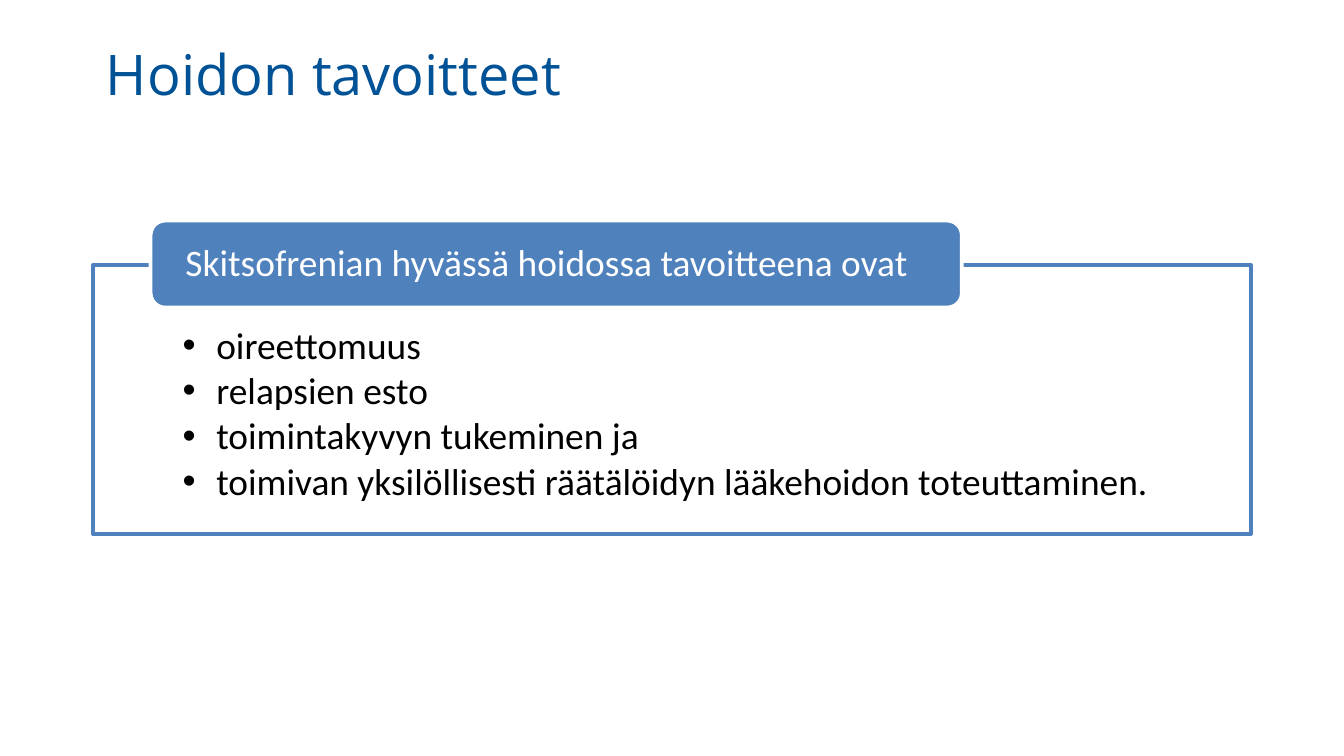
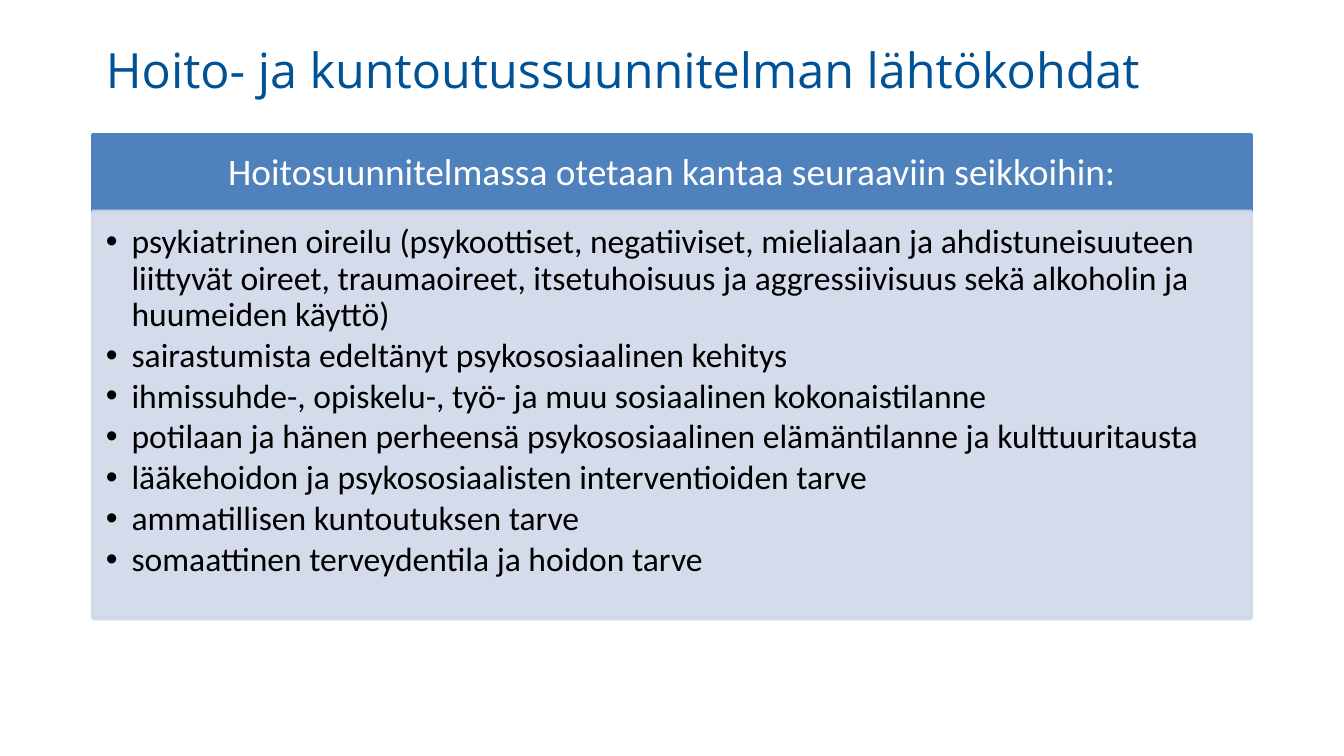
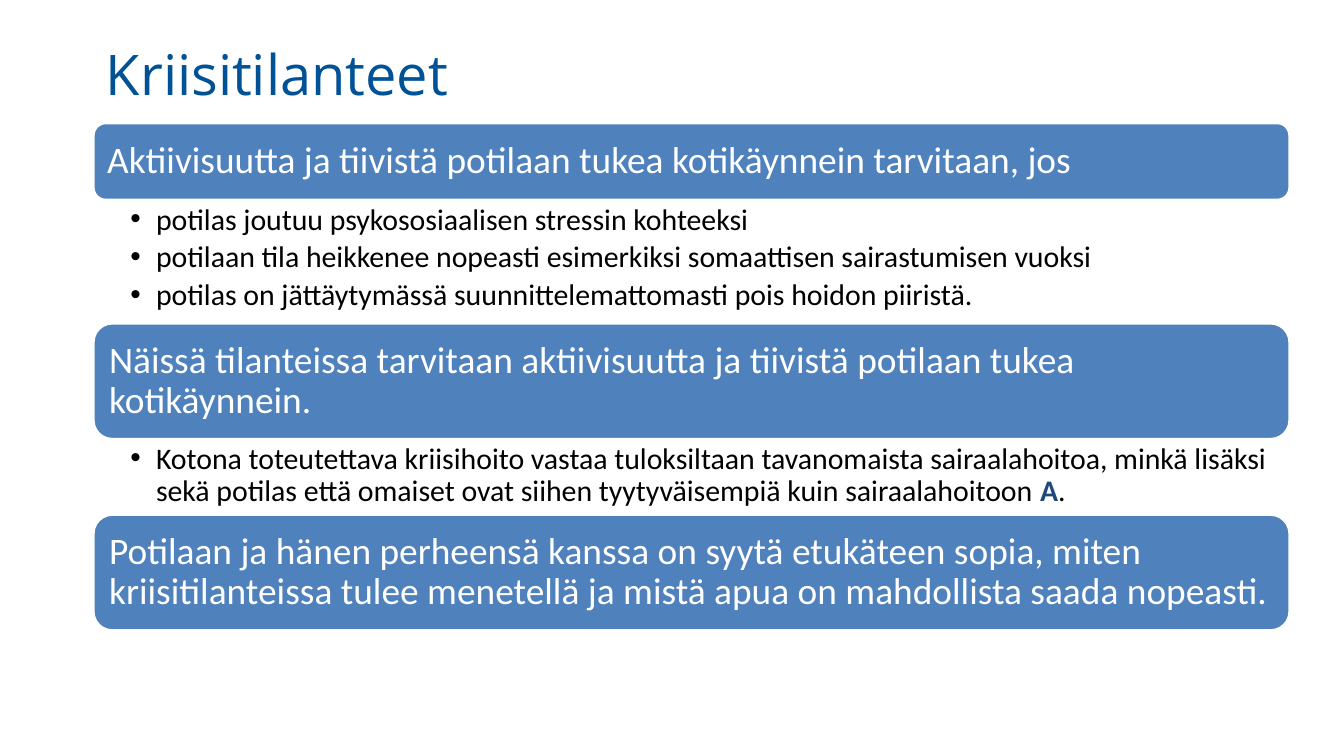
"""Build three slides on the aims, plan and crises of schizophrenia care."""
from lxml import etree
from pptx import Presentation
from pptx import util as u
from pptx.dml.color import RGBColor
from pptx.enum import shapes, text
from pptx.oxml.ns import qn

HUES = {"title": "005296", "blue": "4F81BD", "pale": "D0D8E8",
        "white": "FFFFFF", "black": "000000", "grade": "1F497D"}
HEAD, BODY = "Open Sans", "Calibri"
LEFT, WIDE = 49.7, 620.6
BOX, ROUND = shapes.MSO_SHAPE.RECTANGLE, shapes.MSO_SHAPE.ROUNDED_RECTANGLE
MID, TOP = text.MSO_ANCHOR.MIDDLE, text.MSO_ANCHOR.TOP

AIMS = {
    "title": "Hoidon tavoitteet",
    "label": "Skitsofrenian hyvässä hoidossa tavoitteena ovat",
    "items": [
        "oireettomuus",
        "relapsien esto",
        "toimintakyvyn tukeminen ja",
        "toimivan yksilöllisesti räätälöidyn lääkehoidon toteuttaminen.",
    ],
}
PLAN = {
    "title": "Hoito- ja kuntoutussuunnitelman lähtökohdat",
    "label": "Hoitosuunnitelmassa otetaan kantaa seuraaviin seikkoihin:",
    "items": [
        "psykiatrinen oireilu (psykoottiset, negatiiviset, mielialaan ja "
        "ahdistuneisuuteen liittyvät oireet, traumaoireet, itsetuhoisuus ja "
        "aggressiivisuus sekä alkoholin ja huumeiden käyttö)",
        "sairastumista edeltänyt psykososiaalinen kehitys",
        "ihmissuhde-, opiskelu-, työ- ja muu sosiaalinen kokonaistilanne",
        "potilaan ja hänen perheensä psykososiaalinen elämäntilanne ja kulttuuritausta",
        "lääkehoidon ja psykososiaalisten interventioiden tarve",
        "ammatillisen kuntoutuksen tarve",
        "somaattinen terveydentila ja hoidon tarve",
    ],
}
CRISES = {
    "title": "Kriisitilanteet",
    "parts": [
        (41.9, "Aktiivisuutta ja tiivistä potilaan tukea kotikäynnein tarvitaan, jos"),
        (65.4, [
            "potilas joutuu psykososiaalisen stressin kohteeksi",
            "potilaan tila heikkenee nopeasti esimerkiksi somaattisen sairastumisen vuoksi",
            "potilas on jättäytymässä suunnittelemattomasti pois hoidon piiristä.",
        ]),
        (62.7, "Näissä tilanteissa tarvitaan aktiivisuutta ja tiivistä potilaan "
               "tukea kotikäynnein."),
        (39.8, [
            ("Kotona toteutettava kriisihoito vastaa tuloksiltaan tavanomaista "
             "sairaalahoitoa, minkä lisäksi sekä potilas että omaiset ovat siihen "
             "tyytyväisempiä kuin sairaalahoitoon ", "A", "."),
        ]),
        (62.7, "Potilaan ja hänen perheensä kanssa on syytä etukäteen sopia, miten "
               "kriisitilanteissa tulee menetellä ja mistä apua on mahdollista "
               "saada nopeasti."),
    ],
}


def hue(name):
    return RGBColor.from_string(HUES[name])


def panel(slide, kind, area, fill, line, clear=None):
    shape = slide.shapes.add_shape(kind, *map(u.Pt, area))
    shape.shadow.inherit = False
    shape.fill.solid()
    shape.fill.fore_color.rgb = hue(fill)
    shape.line.color.rgb = hue(line)
    shape.line.width = u.Pt(2)
    if clear:
        for tint in shape.element.spPr.iter(qn("a:srgbClr")):
            etree.SubElement(tint, qn("a:alpha"), val=str(clear * 1000))
    return shape


def plain(slide, area):
    return slide.shapes.add_textbox(*map(u.Pt, area))


def setup(shape, pads, anchor):
    frame = shape.text_frame
    frame.word_wrap = True
    frame.vertical_anchor = anchor
    (frame.margin_left, frame.margin_top,
     frame.margin_right, frame.margin_bottom) = map(u.Pt, pads)
    return frame


def style(para, size, color, face=BODY):
    para.font.size = u.Pt(size)
    para.font.name = face
    para.font.color.rgb = hue(color)


def label(shape, words, side, align=text.PP_ALIGN.LEFT):
    para = setup(shape, (side, 0, side, 0), MID).paragraphs[0]
    para.text = words
    para.alignment = align
    para.line_spacing = 0.9
    style(para, 20, "white")


def bullets(shape, items, pads, size, dent, gap):
    frame = setup(shape, pads, TOP)
    for i, item in enumerate(items):
        para = frame.add_paragraph() if i else frame.paragraphs[0]
        para.alignment = text.PP_ALIGN.LEFT
        para.level = 1
        para.line_spacing = 0.9
        para.space_after = u.Pt(round(gap * size, 1))
        props = para._p.get_or_add_pPr()
        props.set("marL", str(u.Pt(dent)))
        props.set("indent", str(-u.Pt(dent)))
        etree.SubElement(props, qn("a:buFont"), typeface="Arial")
        etree.SubElement(props, qn("a:buChar"), char="•")
        style(para, size, "black")
        if isinstance(item, str):
            para.text = item
            continue
        for words in item:
            para.add_run().text = words
        grade = para.runs[1].font
        grade.bold = True
        grade.color.rgb = hue("grade")


def start(deck, title, size=30, high=44):
    slide = deck.slides.add_slide(deck.slide_layouts[6])
    box = plain(slide, (LEFT, 17.3, WIDE, high))
    para = setup(box, (7.2, 3.6, 7.2, 3.6), MID).paragraphs[0]
    para.text = title
    style(para, size, "title", HEAD)
    return slide


def aims(deck):
    slide = start(deck, AIMS["title"])
    frame = panel(slide, BOX, (LEFT, 142, WIDE, 144), "white", "blue")
    bullets(frame, AIMS["items"], (48.2, 33.1, 48.2, 11.5), 20, 18, 0.135)
    tab = panel(slide, ROUND, (80.7, 118.2, 434.6, 46.6), "blue", "white")
    label(tab, AIMS["label"], 16.4)


def plan(deck):
    slide = start(deck, PLAN["title"], 26, 39)
    head = panel(slide, BOX, (LEFT, 72.5, WIDE, 40.8), "blue", "blue")
    label(head, PLAN["label"], 11.5, text.PP_ALIGN.CENTER)
    body = panel(slide, BOX, (LEFT, 113.3, WIDE, 218), "pale", "pale", 90)
    bullets(body, PLAN["items"], (7.2, 7.2, 10, 11.5), 18, 13.7, 0.135)


def crises(deck):
    slide = start(deck, CRISES["title"])
    top = 65.6
    for high, part in CRISES["parts"]:
        area = LEFT, top, 641.5, high
        if isinstance(part, str):
            label(panel(slide, ROUND, area, "blue", "white"), part, 5.7)
        else:
            bullets(plain(slide, area), part, (20.2, 2, 11.5, 2), 16, 13.7, 0.18)
        top += high


def main():
    deck = Presentation()
    deck.slide_width, deck.slide_height = u.Pt(720), u.Pt(405)
    for build in (aims, plan, crises):
        build(deck)
    deck.save("out.pptx")


if __name__ == "__main__":
    main()
